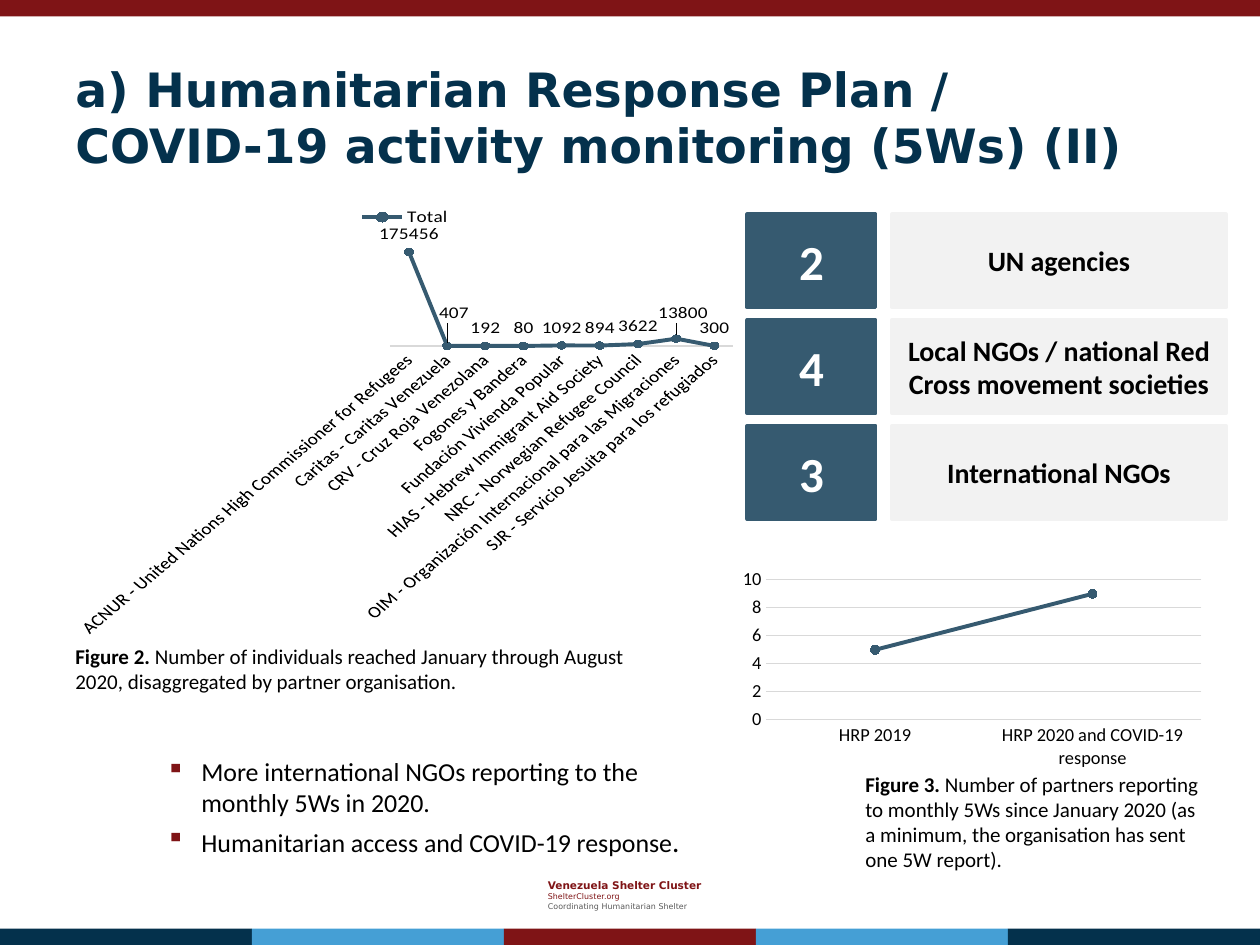
from dataclasses import dataclass

from lxml import etree
from pptx import Presentation
from pptx import util as u
from pptx.chart.data import CategoryChartData
from pptx.dml.color import RGBColor
from pptx.enum import chart as charts, shapes, text
from pptx.oxml.ns import qn


@dataclass(frozen=True)
class Theme:
    red: str = "7F1416"
    navy: str = "04314C"
    sky: str = "459FD5"
    steel: str = "365A70"
    pale: str = "F2F2F2"
    rule: str = "D9D9D9"
    grey: str = "595959"
    black: str = "000000"
    white: str = "FFFFFF"
    heading_font: str = "DejaVu Sans"
    body_font: str = "Calibri"
    title: float = 27
    number: float = 28
    label: float = 16
    bullet: float = 14.8
    full_stop: float = 16.6
    caption: float = 12
    footer: float = 6
    footer_small: float = 4.5


THEME = Theme()
WIDTH, HEIGHT = 10, 7.5
BAND = 0.13
MARGIN = 0.05 * WIDTH

# Grid of partner counts
COLUMNS = ((5.93, 1.02), (7.08, 2.65))
ROW_TOP, ROW_STEP, ROW_HEIGHT = 1.7, 0.84, 0.74
PARTNERS = [("2", "UN agencies"),
            ("4", "Local NGOs / national Red Cross movement societies"),
            ("3", "International NGOs")]

REACHED = {
    "ACNUR - United Nations High Commissioner for Refugees": 175456,
    "Caritas - Caritas Venezuela": 407,
    "CRV - Cruz Roja Venezolana": 192,
    "Fogones y Bandera": 80,
    "Fundación Vivienda Popular": 1092,
    "HIAS - Hebrew Immigrant Aid Society": 894,
    "NRC - Norwegian Refugee Council": 3622,
    "OIM - Organización Internacional para las Migraciones": 13800,
    "SJR - Servicio Jesuita para los refugiados": 300,
}
REPORTING = {"HRP 2019": 5, "HRP 2020 and COVID-19 response": 9}


def color(value):
    return RGBColor.from_string(value)


def inches(*lengths):
    return [u.Inches(length) for length in lengths]


def style_font(font, size, fill=THEME.black, name=THEME.body_font, bold=False):
    font.size, font.name, font.bold = u.Pt(size), name, bold
    font.color.rgb = color(fill)


def add_run(paragraph, words, **style):
    run = paragraph.add_run()
    run.text = words
    style_font(run.font, **style)


def write(shape, paragraphs, anchor=text.MSO_ANCHOR.TOP, align=None, bullet=None, gap=0):
    """Each paragraph is a list of (words, style) runs."""
    frame = shape.text_frame
    frame.word_wrap = True
    frame.vertical_anchor = anchor
    for index, runs in enumerate(paragraphs):
        paragraph = frame.add_paragraph() if index else frame.paragraphs[0]
        if bullet:
            add_bullet(paragraph, bullet)
        if align is not None:
            paragraph.alignment = align
        if index and gap:
            paragraph.space_before = u.Pt(gap)
        for words, style in runs:
            add_run(paragraph, words, **style)


def add_bullet(paragraph, sign):
    properties = paragraph._p.get_or_add_pPr()
    indent = u.Inches(0.28)
    properties.set("marL", str(indent))
    properties.set("indent", str(-indent))
    fill = etree.SubElement(properties, qn("a:buClr"))
    etree.SubElement(fill, qn("a:srgbClr"), val=THEME.red)
    etree.SubElement(properties, qn("a:buChar"), char=sign)


def add_text(slide, box, paragraphs, **layout):
    shape = slide.shapes.add_textbox(*inches(*box))
    write(shape, paragraphs, **layout)


def add_caption(slide, box, figure, words):
    add_text(slide, box, [[(figure, dict(size=THEME.caption, bold=True)),
                           (words, dict(size=THEME.caption))]])


def add_block(slide, box, fill, outlined=False):
    shape = slide.shapes.add_shape(shapes.MSO_SHAPE.RECTANGLE, *inches(*box))
    shape.shadow.inherit = False
    shape.fill.solid()
    shape.fill.fore_color.rgb = color(fill)
    if outlined:
        shape.line.color.rgb = color(fill)
        shape.line.width = u.Pt(2)
    else:
        shape.line.fill.background()
    return shape


def add_line_chart(slide, box, name, values, size):
    data = CategoryChartData()
    data.categories = list(values)
    data.add_series(name, list(values.values()))
    chart = slide.shapes.add_chart(
        charts.XL_CHART_TYPE.LINE_MARKERS, *inches(*box), data).chart
    style_font(chart.font, size)
    chart.has_title = chart.has_legend = False
    chart.plots[0].vary_by_categories = False
    series = chart.plots[0].series[0]
    series.smooth = False
    series.format.line.color.rgb = color(THEME.steel)
    series.format.line.width = u.Pt(2.25)
    series.marker.style, series.marker.size = charts.XL_MARKER_STYLE.CIRCLE, 5
    series.marker.format.fill.solid()
    series.marker.format.fill.fore_color.rgb = color(THEME.steel)
    series.marker.format.line.color.rgb = color(THEME.steel)
    for axis in (chart.category_axis, chart.value_axis):
        axis.major_tick_mark = axis.minor_tick_mark = charts.XL_TICK_MARK.NONE
        style_font(axis.tick_labels.font, size)
    chart.category_axis.format.line.color.rgb = color(THEME.rule)
    chart.category_axis.format.line.width = u.Pt(0.75)
    chart.value_axis.minimum_scale = 0
    return chart


def shift_label(series, index, right, down):
    """Move one data label by shares of the chart's size."""
    label = series.points[index].data_label
    style_font(label.font, 11)
    label.position = charts.XL_LABEL_POSITION.ABOVE
    element = series.data_labels._element.xpath(f"c:dLbl[c:idx/@val='{index}']")[0]
    layout = etree.Element(qn("c:layout"))
    manual = etree.SubElement(layout, qn("c:manualLayout"))
    etree.SubElement(manual, qn("c:x"), val=str(right))
    etree.SubElement(manual, qn("c:y"), val=str(down))
    element.insert(1, layout)


def add_reached_chart(slide):
    chart = add_line_chart(slide, (MARGIN, 1.55, 5.43, 3.51), "Total", REACHED, 11)
    chart.has_legend = True
    chart.legend.position = charts.XL_LEGEND_POSITION.TOP
    chart.legend.include_in_layout = False
    style_font(chart.legend.font, 11)
    chart.value_axis.visible = False
    chart.value_axis.has_major_gridlines = False
    body = chart.category_axis._element.find(qn("c:txPr")).find(qn("a:bodyPr"))
    body.set("rot", str(-45 * 60000))
    series = chart.plots[0].series[0]
    labels = series.data_labels
    labels.show_value = True
    labels.position = charts.XL_LABEL_POSITION.ABOVE
    style_font(labels.font, 11)
    shift_label(series, 1, 0.01, -0.04)
    shift_label(series, 7, 0.01, -0.02)


def add_reporting_chart(slide):
    chart = add_line_chart(slide, (5.82, 4.48, 3.79, 1.66), "Series 1", REPORTING, 10.5)
    axis = chart.value_axis
    axis.maximum_scale, axis.major_unit = 10, 2
    axis.format.line.fill.background()
    axis.major_gridlines.format.line.color.rgb = color(THEME.rule)
    axis.major_gridlines.format.line.width = u.Pt(0.75)


def add_frame(slide):
    add_block(slide, (0, 0, WIDTH, BAND), THEME.red)
    stripes = (THEME.navy, THEME.sky, THEME.red, THEME.sky, THEME.navy)
    step = WIDTH / len(stripes)
    for index, fill in enumerate(stripes):
        add_block(slide, (index * step, HEIGHT - BAND, step, BAND), fill)
    small = dict(size=THEME.footer_small, name=THEME.heading_font)
    add_text(slide, (4.25, 6.93, 1.9, 0.35), [
        [("Venezuela Shelter Cluster", dict(small, size=THEME.footer, fill=THEME.red, bold=True))],
        [("ShelterCluster.org", dict(small, fill=THEME.red))],
        [("Coordinating Humanitarian Shelter", dict(small, fill=THEME.grey))],
    ], anchor=text.MSO_ANCHOR.MIDDLE)


def add_partner_grid(slide):
    styles = (dict(size=THEME.number, fill=THEME.white, bold=True),
              dict(size=THEME.label, bold=True))
    for row, cells in enumerate(PARTNERS):
        top = ROW_TOP + row * ROW_STEP
        for (left, width), fill, words, style in zip(
                COLUMNS, (THEME.steel, THEME.pale), cells, styles):
            block = add_block(slide, (left, top, width, ROW_HEIGHT), fill, outlined=True)
            write(block, [[(words, style)]], anchor=text.MSO_ANCHOR.MIDDLE,
                  align=text.PP_ALIGN.CENTER)


def main():
    presentation = Presentation()
    presentation.slide_width, presentation.slide_height = inches(WIDTH, HEIGHT)
    slide = presentation.slides.add_slide(presentation.slide_layouts[6])

    # Bands, footer and title
    add_frame(slide)
    add_text(slide, (MARGIN, 0.3, WIDTH - 2 * MARGIN, 1.25), [[
        ("a) Humanitarian Response Plan / COVID-19 activity monitoring (5Ws) (II)",
         dict(size=THEME.title, fill=THEME.navy, name=THEME.heading_font, bold=True))]],
        anchor=text.MSO_ANCHOR.MIDDLE)

    # Figures and partner counts
    add_reached_chart(slide)
    add_partner_grid(slide)
    add_caption(slide, (MARGIN, 5.06, 4.63, 0.5), "Figure 2. ",
                "Number of individuals reached January through August 2020, "
                "disaggregated by partner organisation.")
    add_reporting_chart(slide)
    add_caption(slide, (6.77, 6.07, 2.86, 0.91), "Figure 3. ",
                "Number of partners reporting to monthly 5Ws since January 2020 "
                "(as a minimum, the organisation has sent one 5W report).")

    # Findings
    finding = dict(size=THEME.bullet)
    add_text(slide, (1.22, 5.95, 4.41, 1.12), [
        [("More international NGOs reporting to the monthly 5Ws in 2020.", finding)],
        [("Humanitarian access and COVID-19 response", finding),
         (".", dict(size=THEME.full_stop))],
    ], bullet="▪", gap=3)

    presentation.save("out.pptx")


if __name__ == "__main__":
    main()
